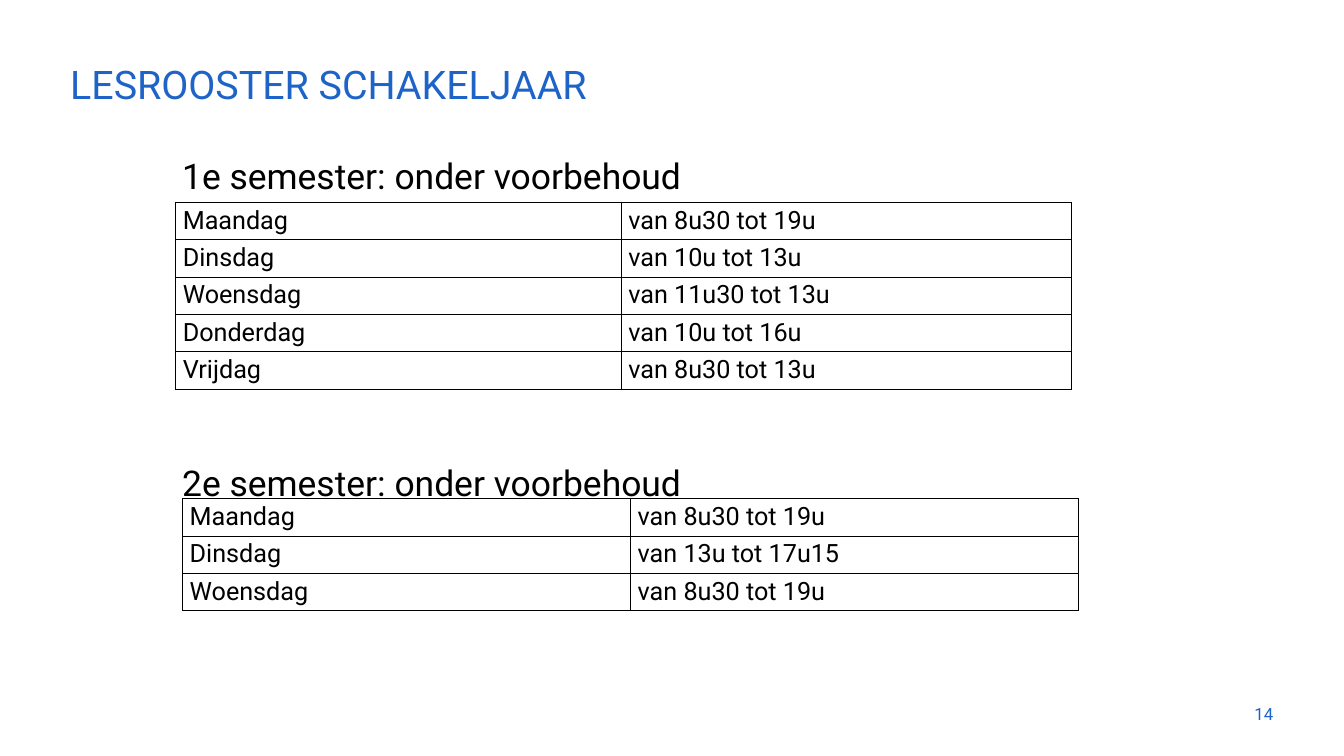
"""Build the timetable slide for the bridging year."""
from lxml import etree
from pptx import Presentation
from pptx.dml.color import RGBColor
from pptx.enum.text import MSO_ANCHOR, PP_ALIGN
from pptx.oxml.ns import qn
from pptx.util import Pt

TOP, MIDDLE, BOTTOM = MSO_ANCHOR.TOP, MSO_ANCHOR.MIDDLE, MSO_ANCHOR.BOTTOM
LEFT, RIGHT = PP_ALIGN.LEFT, PP_ALIGN.RIGHT
BLUE = RGBColor(0x1E, 0x64, 0xC8)
BLACK = RGBColor(0, 0, 0)
FONT = "Roboto"
ROW_HEIGHT = 37.2

TITLE = "LESROOSTER SCHAKELJAAR"
PAGE_NUMBER = "14"
SEMESTERS = [
    {
        "heading": "1e semester: onder voorbehoud",
        "heading_top": 156.5,
        "table_at": (178.5, 205.5),
        "columns": (452.5, 457.5),
        "rows": [
            ("Maandag", "van 8u30 tot 19u"),
            ("Dinsdag", "van 10u tot 13u"),
            ("Woensdag", "van 11u30 tot 13u"),
            ("Donderdag", "van 10u tot 16u"),
            ("Vrijdag", "van 8u30 tot 13u"),
        ],
    },
    {
        "heading": "2e semester: onder voorbehoud",
        "heading_top": 468.3,
        "table_at": (185.5, 506.5),
        "columns": (455, 455),
        "rows": [
            ("Maandag", "van 8u30 tot 19u"),
            ("Dinsdag", "van 13u tot 17u15"),
            ("Woensdag", "van 8u30 tot 19u"),
        ],
    },
]


def set_text(tf, text, size, color, align=LEFT):
    p = tf.paragraphs[0]
    p.text = text
    p.alignment = align
    p.font.name = FONT
    p.font.size = Pt(size)
    p.font.color.rgb = color
    return p


def add_text(s, box, text, size, color, anchor=TOP, align=LEFT):
    tf = s.shapes.add_textbox(*map(Pt, box)).text_frame
    tf.word_wrap = True
    tf.vertical_anchor = anchor
    tf.margin_left = tf.margin_right = tf.margin_top = tf.margin_bottom = 0
    return set_text(tf, text, size, color, align)


def add_borders(cell):
    tc_pr = cell._tc.get_or_add_tcPr()
    for i, side in enumerate(("a:lnL", "a:lnR", "a:lnT", "a:lnB")):
        ln = etree.Element(qn(side), w=str(Pt(1)))
        fill = etree.SubElement(ln, qn("a:solidFill"))
        etree.SubElement(fill, qn("a:srgbClr"), val=str(BLACK))
        tc_pr.insert(i, ln)


def add_timetable(s, at, columns, rows):
    size = (sum(columns), ROW_HEIGHT * len(rows))
    table = s.shapes.add_table(len(rows), len(columns), *map(Pt, at + size)).table
    table.first_row = table.horz_banding = False
    for column, width in zip(table.columns, columns):
        column.width = Pt(width)
    for r, row in enumerate(rows):
        for c, text in enumerate(row):
            cell = table.cell(r, c)
            cell.fill.background()
            add_borders(cell)
            set_text(cell.text_frame, text, 25.6, BLACK)


def main():
    prs = Presentation()
    prs.slide_width, prs.slide_height = Pt(1365), Pt(768)
    s = prs.slides.add_slide(prs.slide_layouts[6])
    add_text(s, (71.3, 47, 1222.5, 63), TITLE, 40, BLUE, BOTTOM).line_spacing = 0.9
    for semester in SEMESTERS:
        add_text(s, (185, semester["heading_top"], 900, 43),
                 semester["heading"], 36, BLACK)
        add_timetable(s, semester["table_at"], semester["columns"], semester["rows"])
    add_text(s, (1234.8, 705, 58.3, 41), PAGE_NUMBER, 17.1, BLUE, MIDDLE, RIGHT)
    prs.save("out.pptx")


if __name__ == "__main__":
    main()
